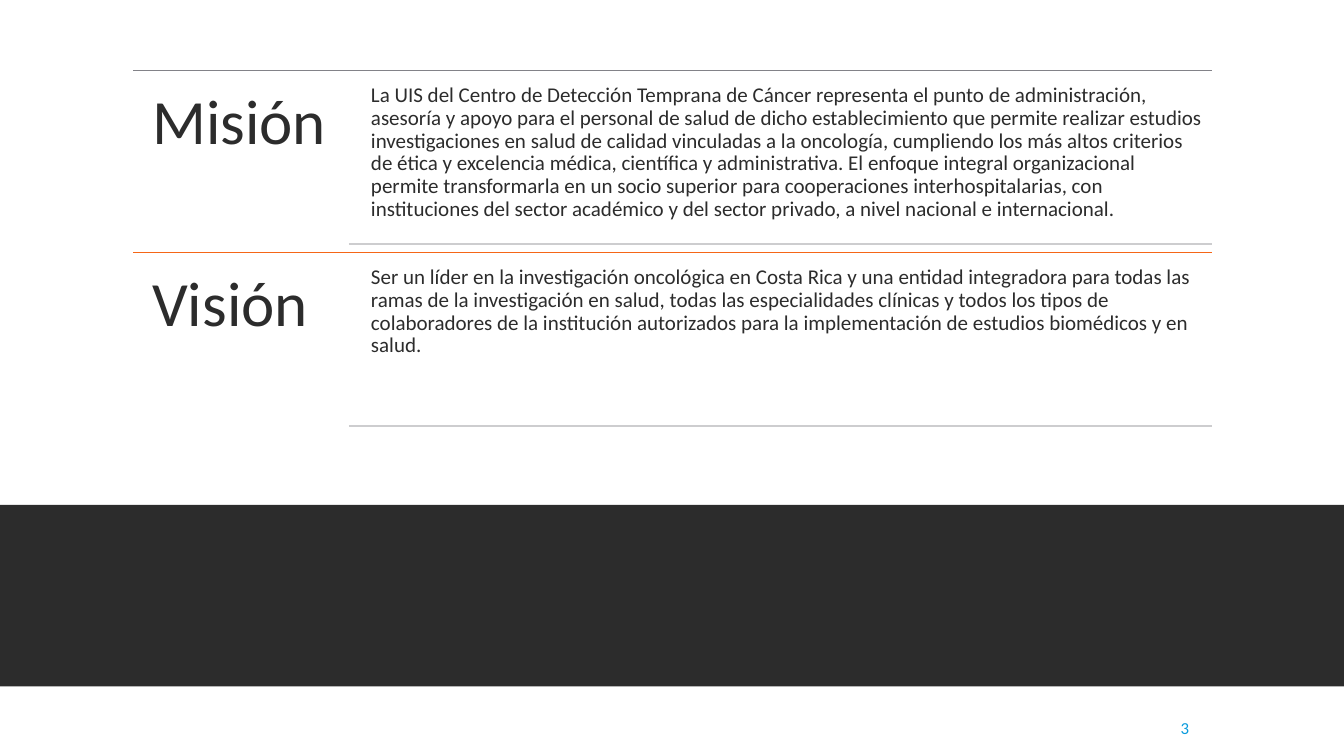
from lxml import etree
from pptx import Presentation
from pptx.dml.color import RGBColor
from pptx.enum.shapes import MSO_CONNECTOR, MSO_SHAPE
from pptx.enum.text import MSO_ANCHOR
from pptx.oxml.ns import qn
from pptx.util import Inches, Pt

STRAIGHT = MSO_CONNECTOR.STRAIGHT
RECTANGLE = MSO_SHAPE.RECTANGLE
TOP, MIDDLE = MSO_ANCHOR.TOP, MSO_ANCHOR.MIDDLE

WHITE = RGBColor(0xFF, 0xFF, 0xFF)
DARK = RGBColor(0x2C, 0x2C, 0x2C)
BLUE = RGBColor(0x09, 0x9B, 0xDD)
GREY = RGBColor(0x82, 0x82, 0x88)
LIGHT_GREY = RGBColor(0xCD, 0xCD, 0xCF)
ORANGE = RGBColor(0xF5, 0x66, 0x17)

FONT = "Calibri"
SLIDE_WIDTH, SLIDE_HEIGHT = 13.33, 7.5
LEFT, RIGHT = 1.32, 12.02
HEADING_WIDTH = 2.14
BODY_LEFT = 3.62
FIRST_TOP, SECTION_HEIGHT = 0.7, 1.805

SECTIONS = [
    ("Misión", GREY,
     "La UIS del Centro de Detección Temprana de Cáncer representa el punto de "
     "administración, asesoría y apoyo para el personal de salud de dicho "
     "establecimiento que permite realizar estudios investigaciones en salud de "
     "calidad vinculadas a la oncología, cumpliendo los más altos criterios de "
     "ética y excelencia médica, científica y administrativa. El enfoque integral "
     "organizacional permite transformarla en un socio superior para cooperaciones "
     "interhospitalarias, con instituciones del sector académico y del sector "
     "privado, a nivel nacional e internacional."),
    ("Visión", ORANGE,
     "Ser un líder en la investigación oncológica en Costa Rica y una entidad "
     "integradora para todas las ramas de la investigación en salud, todas las "
     "especialidades clínicas y todos los tipos de colaboradores de la institución "
     "autorizados para la implementación de estudios biomédicos y en salud."),
]


def add_text(slide, text, left, top, width, height, *, size, color=DARK,
             insets=(0.06, 0.06, 0.06, 0.06), anchor=TOP, line_spacing=None):
    """Add a wrapped text box; insets run left, top, right, bottom."""
    box = slide.shapes.add_textbox(
        Inches(left), Inches(top), Inches(width), Inches(height))
    frame = box.text_frame
    frame.word_wrap = True
    frame.vertical_anchor = anchor
    (frame.margin_left, frame.margin_top,
     frame.margin_right, frame.margin_bottom) = map(Inches, insets)
    paragraph = frame.paragraphs[0]
    paragraph.line_spacing = line_spacing
    run = paragraph.add_run()
    run.text = text
    run.font.name = FONT
    run.font.size = Pt(size)
    run.font.color.rgb = color


def add_rule(slide, left, top, color):
    """Draw a horizontal line from left to the right margin."""
    rule = slide.shapes.add_connector(
        STRAIGHT, Inches(left), Inches(top), Inches(RIGHT), Inches(top))
    rule.line.color.rgb = color
    rule.line.width = Pt(1)
    properties = rule._element.spPr
    etree.SubElement(properties, qn("a:effectLst"))


def add_band(slide, top, height):
    band = slide.shapes.add_shape(
        RECTANGLE, 0, Inches(top), Inches(SLIDE_WIDTH), Inches(height))
    band.shadow.inherit = False
    band.fill.solid()
    band.fill.fore_color.rgb = DARK
    band.line.fill.background()


def add_section(slide, top, heading, rule_color, body):
    add_rule(slide, LEFT, top, rule_color)
    add_text(slide, heading, LEFT, top, HEADING_WIDTH, SECTION_HEIGHT, size=45,
             insets=(0.19, 0.19, 0.19, 0.19), line_spacing=0.9)
    add_text(slide, body, BODY_LEFT, top + 0.08, RIGHT - BODY_LEFT, 1.64,
             size=15, line_spacing=0.9)
    add_rule(slide, LEFT + HEADING_WIDTH, top + 1.72, LIGHT_GREY)


def main():
    presentation = Presentation()
    presentation.slide_width = Inches(SLIDE_WIDTH)
    presentation.slide_height = Inches(SLIDE_HEIGHT)
    slide = presentation.slides.add_slide(presentation.slide_layouts[6])
    slide.background.fill.solid()
    slide.background.fill.fore_color.rgb = WHITE

    add_band(slide, 5.01, 1.8)
    add_text(slide, "3", 11.66, 7.02, 1.03, 0.4, size=12, color=BLUE,
             insets=(0.05, 0.05, 0.1, 0.05), anchor=MIDDLE)
    for index, (heading, rule_color, body) in enumerate(SECTIONS):
        add_section(slide, FIRST_TOP + index * SECTION_HEIGHT,
                    heading, rule_color, body)

    presentation.save("out.pptx")


if __name__ == "__main__":
    main()
